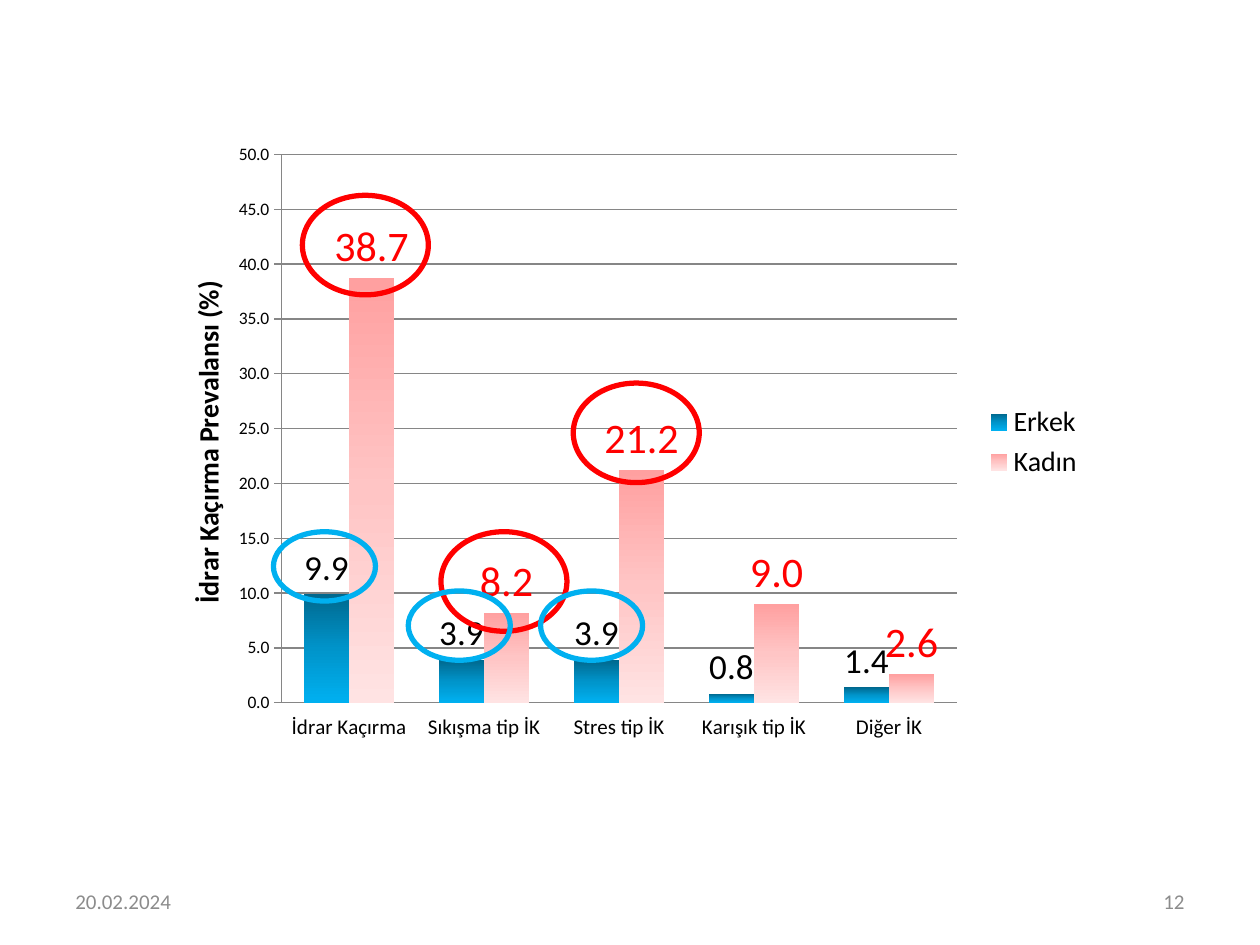
from copy import deepcopy

from pptx import Presentation
from pptx.chart.data import CategoryChartData
from pptx.dml.color import RGBColor
from pptx.enum.chart import (XL_CHART_TYPE, XL_LABEL_POSITION,
                             XL_LEGEND_POSITION, XL_TICK_MARK)
from pptx.enum.shapes import MSO_SHAPE
from pptx.enum.text import MSO_ANCHOR, PP_ALIGN
from pptx.oxml import parse_xml
from pptx.oxml.ns import nsdecls, qn
from pptx.util import Inches, Pt

FONT = "Calibri"
RED, BLUE, GRAY, BLACK = "FF0000", "00B0F0", "8C8C8C", "000000"
TYPES = ["İdrar Kaçırma", "Sıkışma tip İK", "Stres tip İK",
         "Karışık tip İK", "Diğer İK"]
# name, values, gradient, label size, label colour
GROUPS = [
    ("Erkek", (9.9, 3.9, 3.9, 0.8, 1.4), ("00688E", "0094CA", BLUE), 20, BLACK),
    ("Kadın", (38.7, 8.2, 21.2, 9.0, 2.6), ("FFA0A0", "FFC5C5", "FFE3E3"), 24, RED),
]


def color(code):
    return RGBColor.from_string(code)


def style(font, size, code=BLACK, bold=False):
    font.name, font.size, font.bold = FONT, Pt(size), bold
    font.color.rgb = color(code)


def shade(series, codes):
    """Fill the bars from top to bottom with three evenly spaced stops."""
    fill = series.format.fill
    fill.gradient()
    fill.gradient_angle = 270
    stops = series.format.element.find(".//" + qn("a:gsLst")) \
        if hasattr(series.format, "element") \
        else series._element.find(".//" + qn("a:gsLst"))
    stops.append(deepcopy(stops[-1]))
    for stop, code, place in zip(fill.gradient_stops, codes, (0, 0.5, 1)):
        stop.color.rgb = color(code)
        stop.position = place


def fix_plot(chart, x, y, w, h):
    """Set the inner plot area as fractions of the chart."""
    area = chart._chartSpace.chart.plotArea
    for old in area.findall(qn("c:layout")):
        area.remove(old)
    sizes = "".join(f'<c:{tag} val="{val}"/>'
                    for tag, val in zip("xywh", (x, y, w, h)))
    area.insert(0, parse_xml(
        f'<c:layout {nsdecls("c")}><c:manualLayout>'
        '<c:layoutTarget val="inner"/><c:xMode val="edge"/>'
        f'<c:yMode val="edge"/>{sizes}</c:manualLayout></c:layout>'))


def add_bars(slide, box):
    data = CategoryChartData(number_format="0.0")
    data.categories = TYPES
    for name, vals, *_ in GROUPS:
        data.add_series(name, vals)
    chart = slide.shapes.add_chart(XL_CHART_TYPE.COLUMN_CLUSTERED,
                                   *map(Inches, box), data).chart
    style(chart.font, 10)
    chart.has_title = False
    fix_plot(chart, 0.107, 0.032, 0.74, 0.892)

    # Bars and their values
    plot = chart.plots[0]
    plot.gap_width, plot.overlap = 100, 0
    plot.vary_by_categories = False
    for series, (_, _, codes, size, code) in zip(plot.series, GROUPS):
        shade(series, codes)
        labels = series.data_labels
        labels.show_value = True
        labels.position = XL_LABEL_POSITION.OUTSIDE_END
        labels.number_format, labels.number_format_is_linked = "0.0", False
        style(labels.font, size, code)

    # Axes
    cat, val = chart.category_axis, chart.value_axis
    cat.major_tick_mark = XL_TICK_MARK.OUTSIDE
    cat.format.line.fill.background()
    style(cat.tick_labels.font, 12)
    val.minimum_scale, val.maximum_scale, val.major_unit = 0, 50, 5
    val.major_tick_mark = XL_TICK_MARK.OUTSIDE
    val.tick_labels.number_format = "0.0"
    val.tick_labels.number_format_is_linked = False
    style(val.tick_labels.font, 10)
    val.has_major_gridlines = True
    for line in (val.format.line, val.major_gridlines.format.line):
        line.color.rgb = color("868686")
        line.width = Pt(0.75)
    run = val.axis_title.text_frame.paragraphs[0].add_run()
    run.text = "İdrar Kaçırma Prevalansı (%)"
    style(run.font, 16, bold=True)

    # Legend
    chart.has_legend = True
    chart.legend.position = XL_LEGEND_POSITION.RIGHT
    chart.legend.include_in_layout = False
    style(chart.legend.font, 16)


def add_rings(slide, spots, size, code):
    for spot in spots:
        ring = slide.shapes.add_shape(MSO_SHAPE.OVAL,
                                      *map(Inches, spot + size))
        ring.shadow.inherit = False
        ring.fill.background()
        ring.line.color.rgb = color(code)
        ring.line.width = Pt(3)


def add_note(slide, box, text, align):
    frame = slide.shapes.add_textbox(*map(Inches, box)).text_frame
    frame.word_wrap = True
    frame.vertical_anchor = MSO_ANCHOR.MIDDLE
    para = frame.paragraphs[0]
    para.alignment = align
    run = para.add_run()
    run.text = text
    style(run.font, 12, GRAY)


def main():
    deck = Presentation()
    deck.slide_width, deck.slide_height = Inches(10), Inches(7.5)
    slide = deck.slides.add_slide(deck.slide_layouts[6])
    add_bars(slide, (1.46, 1.07, 7.24, 4.88))
    # Rings around the notable values
    add_rings(slide, [(2.4, 1.55), (4.55, 3.04), (3.5, 4.22)], (1, 0.79), RED)
    add_rings(slide, [(2.17, 4.22), (4.29, 4.69), (3.24, 4.69)],
              (0.81, 0.55), BLUE)
    # Footer
    add_note(slide, (0.5, 6.95, 2.33, 0.4), "20.02.2024", PP_ALIGN.LEFT)
    add_note(slide, (7.17, 6.95, 2.33, 0.4), "12", PP_ALIGN.RIGHT)
    deck.save("out.pptx")


if __name__ == "__main__":
    main()
